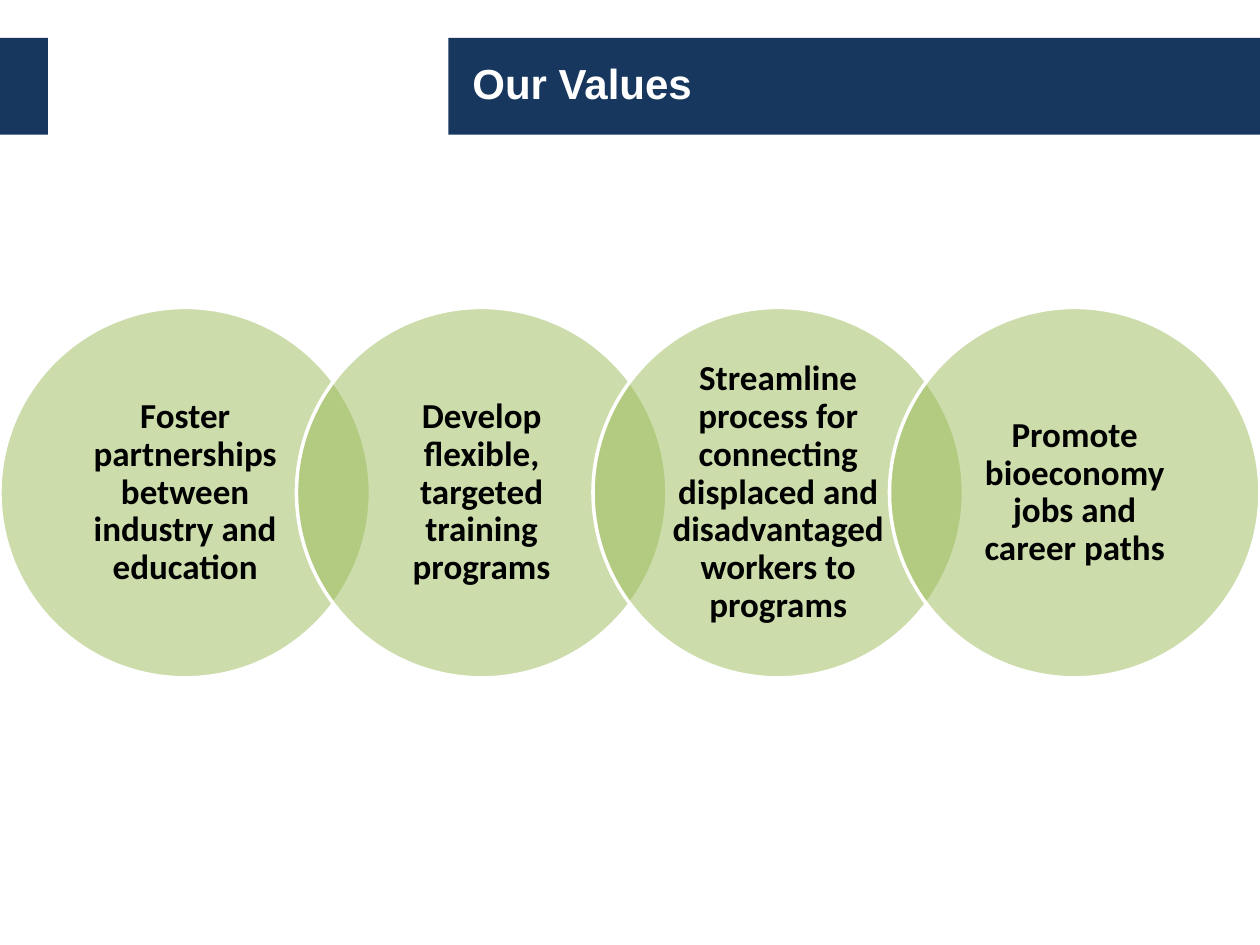
from dataclasses import dataclass

from lxml.etree import SubElement
from pptx import Presentation
from pptx.dml.color import RGBColor
from pptx.enum.shapes import MSO_SHAPE
from pptx.enum.text import MSO_ANCHOR, PP_ALIGN
from pptx.oxml.ns import qn
from pptx.util import Inches, Pt


@dataclass(frozen=True)
class Theme:
    navy: RGBColor = RGBColor(0x17, 0x37, 0x5E)
    green: RGBColor = RGBColor(0x9B, 0xBB, 0x59)
    white: RGBColor = RGBColor(0xFF, 0xFF, 0xFF)
    black: RGBColor = RGBColor(0x00, 0x00, 0x00)
    title_size: Pt = Pt(24)
    value_size: Pt = Pt(20)


theme = Theme()


def write_text(shape, text, *, font, size, color, align, margins, line_spacing=1.0):
    frame = shape.text_frame
    frame.word_wrap = True
    frame.vertical_anchor = MSO_ANCHOR.MIDDLE
    frame.margin_left, frame.margin_top, frame.margin_right, frame.margin_bottom = map(Inches, margins)
    paragraph = frame.paragraphs[0]
    paragraph.alignment = align
    paragraph.line_spacing = line_spacing
    run = paragraph.add_run()
    run.text = text
    run.font.name = font
    run.font.size = size
    run.font.bold = True
    run.font.color.rgb = color


def add_filled_shape(kind, left, top, width, height, fill):
    shape = slide.shapes.add_shape(kind, Inches(left), Inches(top), Inches(width), Inches(height))
    shape.shadow.inherit = False
    shape.fill.solid()
    shape.fill.fore_color.rgb = fill
    shape.line.fill.background()
    return shape


presentation = Presentation()
presentation.slide_width = Inches(10)
presentation.slide_height = Inches(7.5)
slide = presentation.slides.add_slide(presentation.slide_layouts[6])

title_bar = add_filled_shape(MSO_SHAPE.RECTANGLE, 3.56, 0.3, 6.44, 0.77, theme.navy)
write_text(title_bar, "Our Values", font="Arial", size=theme.title_size, color=theme.white,
           align=PP_ALIGN.LEFT, margins=(0.19, 0.05, 0.1, 0.1))
add_filled_shape(MSO_SHAPE.RECTANGLE, 0, 0.3, 0.38, 0.77, theme.navy)

values = [
    "Foster partnerships between industry and education",
    "Develop flexible, targeted training programs",
    "Streamline process for connecting displaced and disadvantaged workers to programs",
    "Promote bioeconomy jobs and career paths",
]
diameter = 2.94
step = (10 - diameter) / (len(values) - 1)

for index, value in enumerate(values):
    circle = add_filled_shape(MSO_SHAPE.OVAL, index * step, 2.44, diameter, diameter, theme.green)
    fill_color = circle.fill._xPr.find(qn("a:solidFill"))[0]
    SubElement(fill_color, qn("a:alpha"), val="50000")
    circle.line.color.rgb = theme.white
    circle.line.width = Pt(2)
    write_text(circle, value, font="Calibri", size=theme.value_size, color=theme.black,
               align=PP_ALIGN.CENTER, margins=(0.16, 0.03, 0.16, 0.03), line_spacing=0.9)

presentation.save("out.pptx")
